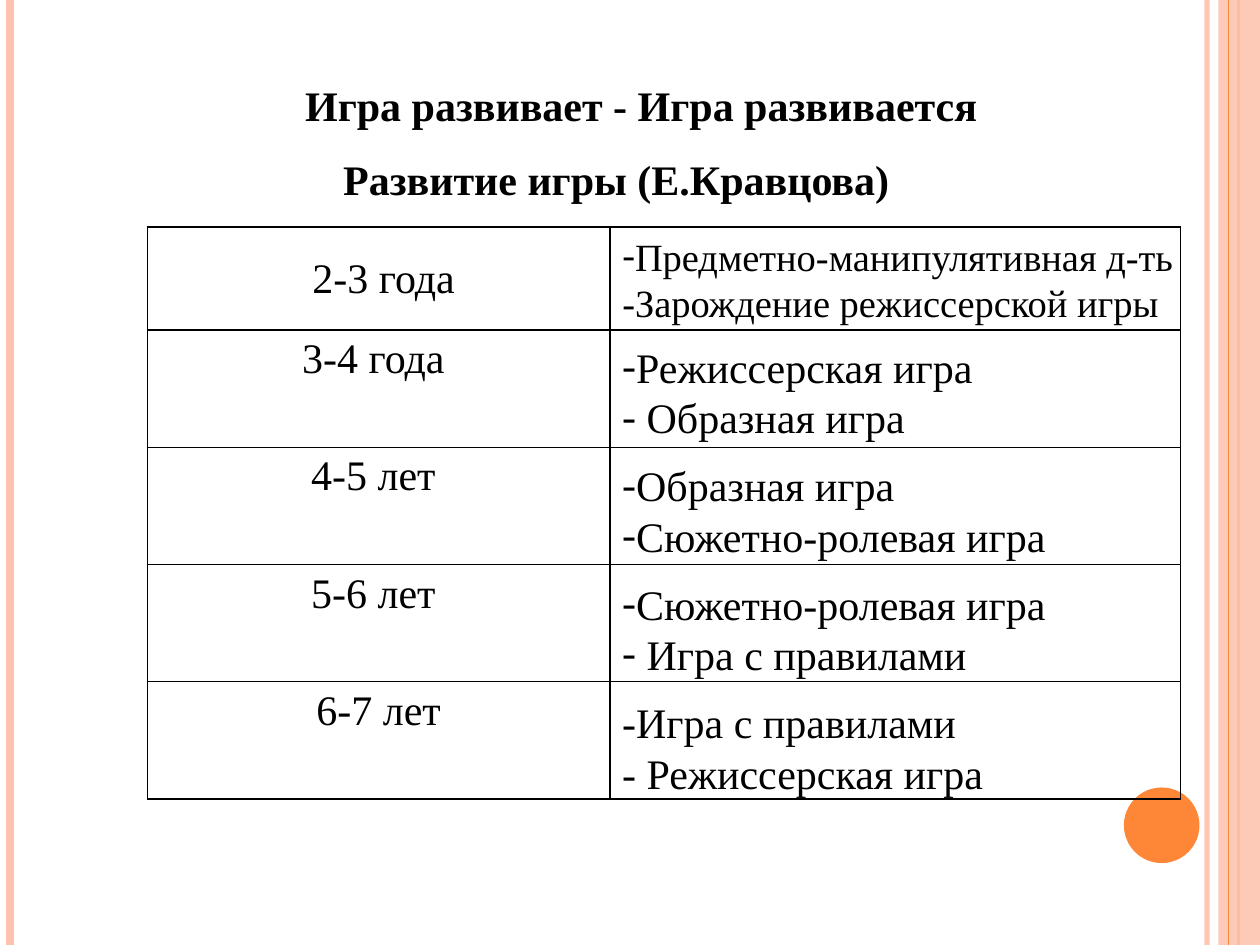
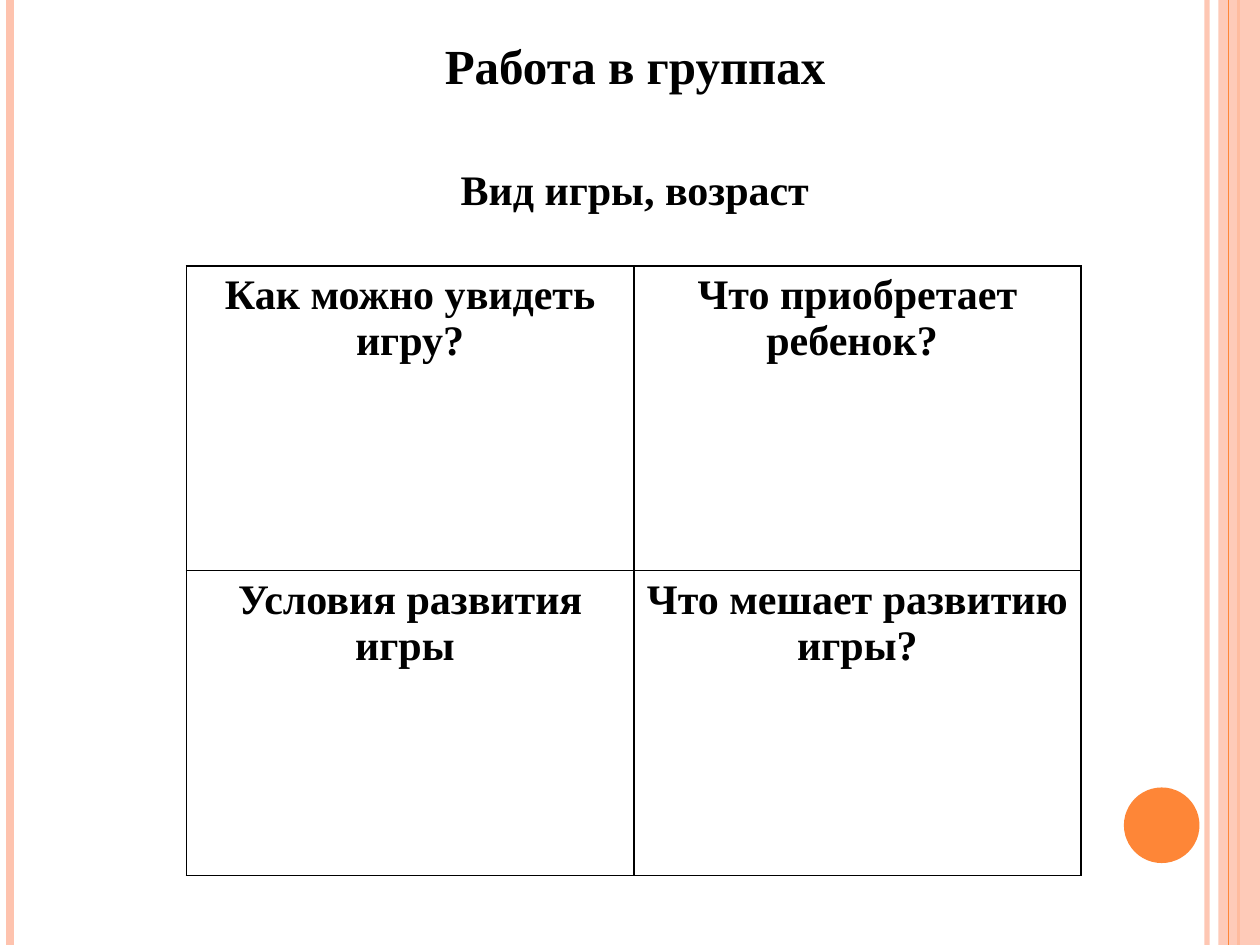
from pptx import Presentation
from pptx.dml.color import RGBColor
from pptx.enum.shapes import MSO_CONNECTOR as CONN, MSO_SHAPE as SHAPE
from pptx.enum.text import MSO_ANCHOR as ANCHOR, PP_ALIGN as ALIGN
from pptx.oxml.ns import qn
from pptx.util import Inches, Pt
from lxml.etree import SubElement

FONT = "Times New Roman"
BLACK, PINK, ORANGE = "000000", "FEC3AE", "FE8637"
WIDTH, HEIGHT = 10, 7.5
TITLE_ONLY = 5


def rgb(color):
    return RGBColor.from_string(color)


def set_alpha(sp, percent):
    for clr in sp._element.spPr.iter(qn("a:srgbClr")):
        SubElement(clr, qn("a:alpha")).set("val", str(percent * 1000))


class Deck:
    def __init__(self):
        self.prs = Presentation()
        self.prs.slide_width, self.prs.slide_height = Inches(WIDTH), Inches(HEIGHT)
        self.slide = None

    def new_slide(self):
        self.slide = self.prs.slides.add_slide(self.prs.slide_layouts[TITLE_ONLY])
        # Side bands, shared by all slides
        self.band_line(9.58, PINK, 3, 93)
        self.band_line(0.08, PINK, 4.5)
        self.band_line(9.83, ORANGE, 1.5)
        self.shape(SHAPE.RECTANGLE, 9.67, 0, 0.33, HEIGHT, PINK, 87)
        self.band_line(9.75, ORANGE, 0.75)
        self.shape(SHAPE.OVAL, 8.92, 6.25, 0.6, 0.6, ORANGE)

    def band_line(self, x, color, width, alpha=100):
        sp = self.slide.shapes.add_connector(
            CONN.STRAIGHT, Inches(x), 0, Inches(x), Inches(HEIGHT))
        sp.line.color.rgb = rgb(color)
        sp.line.width = Pt(width)
        SubElement(sp._element.spPr, qn("a:effectLst"))
        if alpha < 100:
            set_alpha(sp, alpha)

    def shape(self, kind, x, y, w, h, color, alpha=100):
        sp = self.slide.shapes.add_shape(kind, Inches(x), Inches(y), Inches(w), Inches(h))
        sp.shadow.inherit = False
        sp.fill.solid()
        sp.fill.fore_color.rgb = rgb(color)
        sp.line.fill.background()
        if alpha < 100:
            set_alpha(sp, alpha)

    def add_lines(self, tf, lines, size=24, bold=False, align=ALIGN.CENTER, bullets=0):
        """Add one paragraph per line; the first `bullets` lines get a dash."""
        for i, line in enumerate(lines):
            p = tf.paragraphs[0] if i == 0 else tf.add_paragraph()
            p.alignment = align
            r = p.add_run()
            r.text = line
            r.font.name, r.font.size, r.font.bold = FONT, Pt(size), bold
            r.font.color.rgb = rgb(BLACK)
            if i < bullets:
                pPr = p._p.get_or_add_pPr()
                SubElement(pPr, qn("a:buFont")).set("typeface", FONT)
                SubElement(pPr, qn("a:buChar")).set("char", "-")

    def title(self, text, x, y, w, h, size, shift=0.0):
        sp = self.slide.shapes.title
        sp.left, sp.top, sp.width, sp.height = map(Inches, (x, y, w, h))
        self.fill_box(sp.text_frame, [text], shift, size=size, bold=True)

    def text(self, lines, x, y, w, h, shift=0.0, **style):
        sp = self.slide.shapes.add_textbox(Inches(x), Inches(y), Inches(w), Inches(h))
        self.fill_box(sp.text_frame, lines, shift, **style)

    def fill_box(self, tf, lines, shift, **style):
        tf.word_wrap = True
        tf.vertical_anchor = ANCHOR.TOP
        tf.margin_left = Inches(0.1 + shift)
        self.add_lines(tf, lines, **style)

    def table(self, rows, x, y, cols, heights, bold=False):
        frame = self.slide.shapes.add_table(
            len(rows), len(cols), Inches(x), Inches(y),
            Inches(sum(cols)), Inches(sum(heights)))
        table = frame.table
        table.first_row = table.horz_banding = False
        for col, w in zip(table.columns, cols):
            col.width = Inches(w)
        for row, h, texts in zip(table.rows, heights, rows):
            row.height = Inches(h)
            for cell, text in zip(row.cells, texts):
                self.borders(cell)
                cell.fill.background()
                if text:
                    self.add_lines(cell.text_frame, [text], bold=bold)

    def borders(self, cell):
        tcPr = cell._tc.get_or_add_tcPr()
        for side in ("lnL", "lnR", "lnT", "lnB"):
            ln = SubElement(tcPr, qn(f"a:{side}"))
            ln.set("w", str(Pt(1)))
            fill = SubElement(ln, qn("a:solidFill"))
            SubElement(fill, qn("a:srgbClr")).set("val", BLACK)


def play_development(deck):
    deck.new_slide()
    deck.title("Игра развивает - Игра развивается", 0.31, 0.58, 9.06, 0.6, 24, shift=0.5)
    deck.text(["Развитие игры (Е.Кравцова)"], 0.47, 1.17, 8.52, 0.5, shift=0.32, bold=True)

    # Ages in the left column
    ages = ["", "3-4 года ", "4-5 лет ", "5-6 лет ", "6-7 лет"]
    deck.table([(age, "") for age in ages], 1.17, 1.8, [3.67, 4.53], [0.82] + [0.93] * 4)

    # Kinds of play over the right column
    plays = [
        (["Режиссерская игра", " Образная игра"], 2),
        (["Образная игра", "Сюжетно-ролевая игра"], 2),
        (["Сюжетно-ролевая игра", " Игра с правилами"], 2),
        (["-Игра с правилами", "- Режиссерская игра"], 0),
    ]
    for i, (lines, bullets) in enumerate(plays):
        deck.text(lines, 4.84, 2.66 + 0.94 * i, 3.67, 0.91, align=ALIGN.LEFT, bullets=bullets)

    # First row
    deck.text(["2-3 года"], 1.56, 1.95, 2.97, 0.5)
    deck.text(["Предметно-манипулятивная д-ть", "-Зарождение режиссерской игры"],
              4.84, 1.8, 4.69, 0.84, size=22, align=ALIGN.LEFT, bullets=1)


def group_work(deck):
    deck.new_slide()
    deck.title("Работа в группах", 2.03, 0.23, 6.02, 0.57, 28)
    deck.text(["Вид игры, возраст "], 2.19, 1.25, 5.78, 0.5, bold=True)
    questions = [
        ("Как можно увидеть игру?", "Что приобретает ребенок? "),
        ("Условия развития игры ", "Что мешает развитию игры?"),
    ]
    deck.table(questions, 1.48, 2.11, [3.55] * 2, [2.42] * 2, bold=True)


def main():
    deck = Deck()
    play_development(deck)
    group_work(deck)
    deck.prs.save("out.pptx")


if __name__ == "__main__":
    main()
